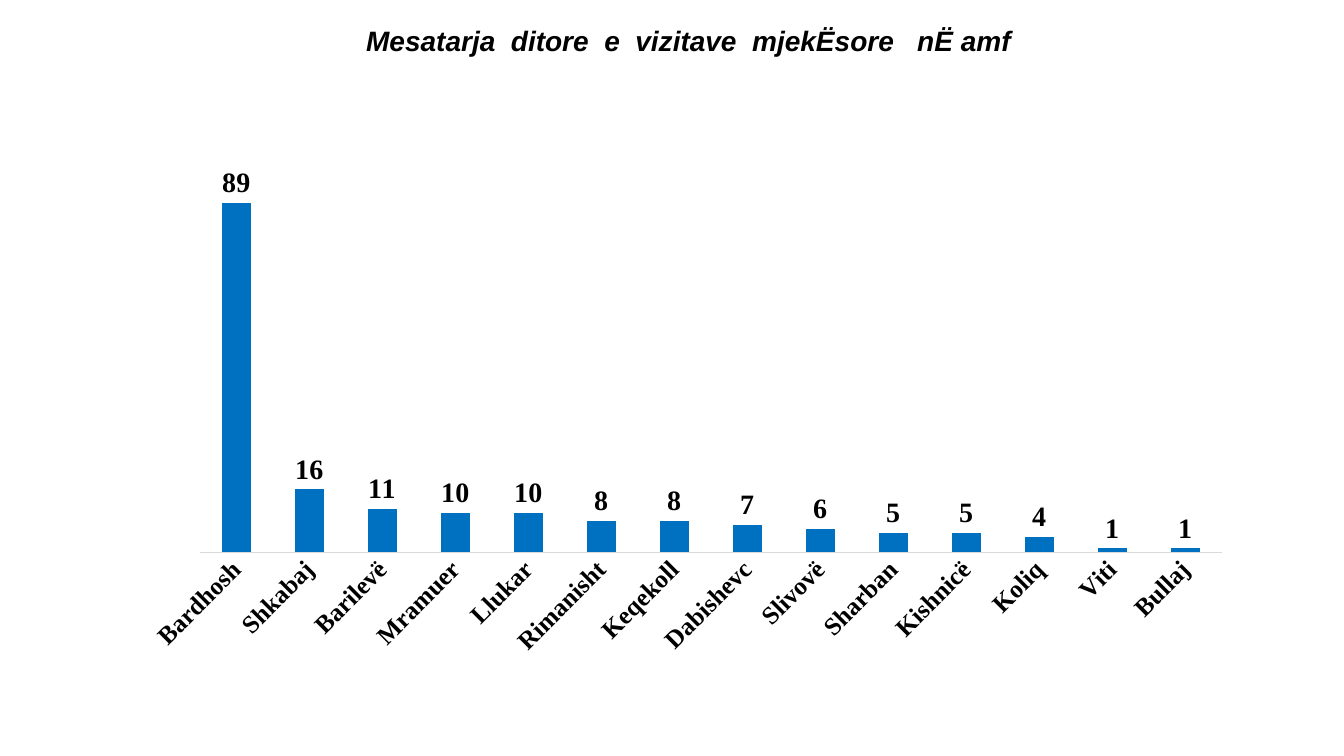
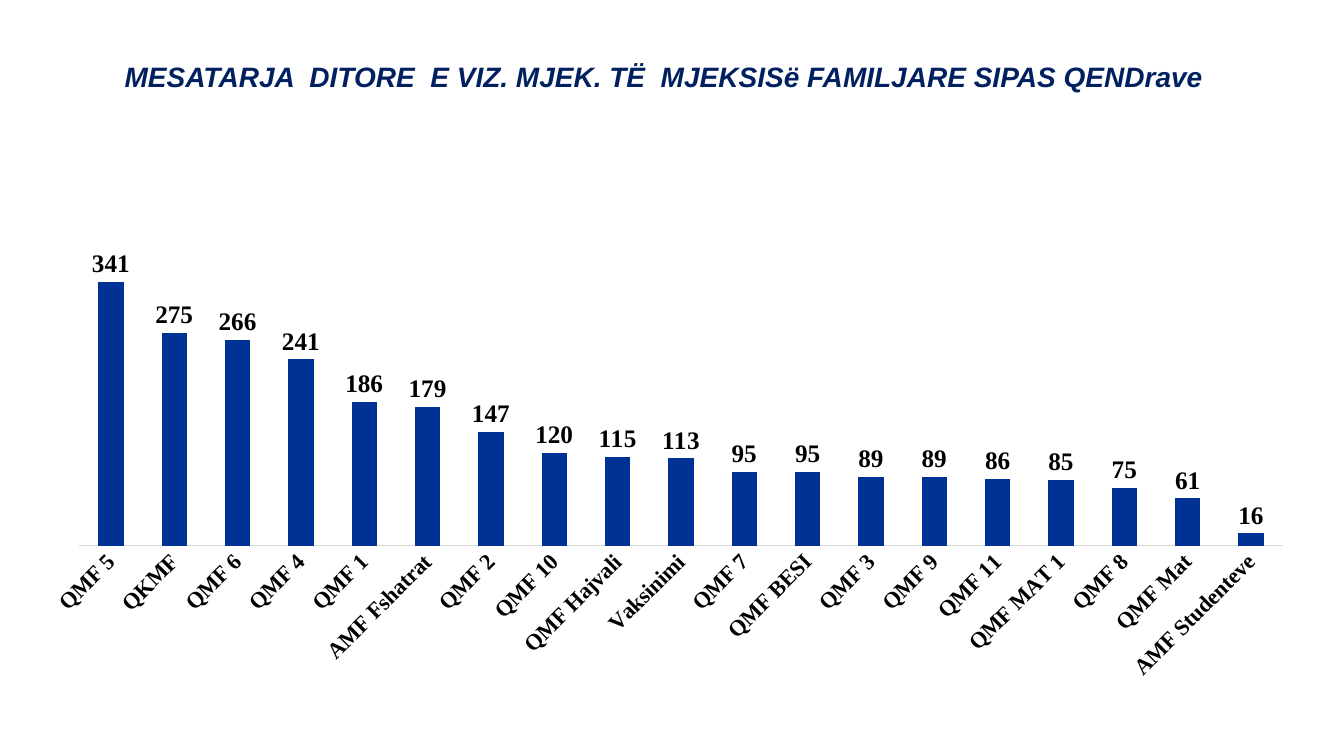
from dataclasses import dataclass

from pptx import Presentation
from pptx import util as u
from pptx.chart import data
from pptx.dml import color
from pptx.enum import chart as ec
from pptx.enum import text
from pptx.oxml import ns

COLORS = {
    "black": "000000",
    "navy": "002060",
    "sky": "0070C0",
    "royal": "003296",
    "axis": "D9D9D9",
}
HEADING_FONT = "Arial"
CHART_FONT = "Calibri"
LABEL_FONT = "Times New Roman"
TITLE_ONLY = 5
LABEL_ROTATION = "-2700000"


@dataclass(frozen=True)
class Box:
    left: float
    top: float
    width: float
    height: float

    def lengths(self) -> tuple[int, int, int, int]:
        return u.Cm(self.left), u.Cm(self.top), u.Cm(self.width), u.Cm(self.height)


@dataclass(frozen=True)
class VisitSlide:
    heading: str
    heading_box: Box
    heading_color: str
    line_spacing: float
    chart_box: Box
    bar_color: str
    category_size: int
    value_size: int
    visits: dict[str, int]


VISIT_SLIDES = (
    VisitSlide(
        heading="Mesatarja  ditore  e  vizitave  mjekËsore   nË amf",
        heading_box=Box(2.08, 0.38, 30.56, 1.37),
        heading_color="black",
        line_spacing=0.9,
        chart_box=Box(3.28, 3.76, 28.07, 13),
        bar_color="sky",
        category_size=18,
        value_size=20,
        visits={
            "Bardhosh": 89, "Shkabaj": 16, "Barilevë": 11, "Mramuer": 10,
            "Llukar": 10, "Rimanisht": 8, "Keqekoll": 8, "Dabishevc": 7,
            "Slivovë": 6, "Sharban": 5, "Kishnicë": 5, "Koliq": 4,
            "Viti": 1, "Bullaj": 1,
        },
    ),
    VisitSlide(
        heading="MESATARJA  DITORE  E VIZ. MJEK. TË  MJEKSISë FAMILJARE SIPAS QENDrave",
        heading_box=Box(2.57, 1.37, 28.32, 1.12),
        heading_color="navy",
        line_spacing=1.0,
        chart_box=Box(0.71, 5.72, 32.26, 11.66),
        bar_color="royal",
        category_size=16,
        value_size=18,
        visits={
            "QMF 5": 341, "QKMF": 275, "QMF 6": 266, "QMF 4": 241,
            "QMF 1": 186, "AMF Fshatrat": 179, "QMF 2": 147, "QMF 10": 120,
            "QMF Hajvali": 115, "Vaksinimi": 113, "QMF 7": 95, "QMF BESI": 95,
            "QMF 3": 89, "QMF 9": 89, "QMF 11": 86, "QMF MAT 1": 85,
            "QMF 8": 75, "QMF Mat": 61, "AMF Studenteve": 16,
        },
    ),
)


def rgb(name: str) -> color.RGBColor:
    return color.RGBColor.from_string(COLORS[name])


def style_font(font, family: str, size: int, color_name: str, bold: bool = True) -> None:
    font.name = family
    font.size = u.Pt(size)
    font.bold = bold
    font.color.rgb = rgb(color_name)


def add_heading(slide, visit_slide: VisitSlide) -> None:
    heading = slide.shapes.title
    heading.left, heading.top, heading.width, heading.height = visit_slide.heading_box.lengths()
    frame = heading.text_frame
    frame.word_wrap = True
    frame.auto_size = text.MSO_AUTO_SIZE.NONE
    frame.vertical_anchor = text.MSO_ANCHOR.MIDDLE
    paragraph = frame.paragraphs[0]
    paragraph.alignment = text.PP_ALIGN.CENTER
    paragraph.line_spacing = visit_slide.line_spacing
    run = paragraph.add_run()
    run.text = visit_slide.heading
    style_font(run.font, HEADING_FONT, 20, visit_slide.heading_color)
    run.font.italic = True


def style_axes(chart, category_size: int) -> None:
    centres = chart.category_axis
    centres.major_tick_mark = ec.XL_TICK_MARK.NONE
    centres.minor_tick_mark = ec.XL_TICK_MARK.NONE
    centres.has_major_gridlines = False
    centres.format.line.color.rgb = rgb("axis")
    centres.format.line.width = u.Pt(0.75)
    style_font(centres.tick_labels.font, LABEL_FONT, category_size, "black")
    body = centres._element.find(ns.qn("c:txPr")).find(ns.qn("a:bodyPr"))
    body.set("rot", LABEL_ROTATION)
    body.set("vert", "horz")
    averages = chart.value_axis
    averages.has_major_gridlines = False
    averages.visible = False


def add_visit_chart(slide, visit_slide: VisitSlide) -> None:
    visits = data.CategoryChartData(number_format="0")
    visits.categories = list(visit_slide.visits)
    visits.add_series("Series 1", list(visit_slide.visits.values()))
    chart = slide.shapes.add_chart(
        ec.XL_CHART_TYPE.COLUMN_CLUSTERED, *visit_slide.chart_box.lengths(), visits
    ).chart
    chart.has_title = False
    chart.has_legend = False
    style_font(chart.font, CHART_FONT, 10, "black", bold=False)
    style_axes(chart, visit_slide.category_size)

    plot = chart.plots[0]
    plot.vary_by_categories = False
    plot.gap_width = 150
    plot.overlap = -25
    bars = plot.series[0]
    bars.format.fill.solid()
    bars.format.fill.fore_color.rgb = rgb(visit_slide.bar_color)
    labels = bars.data_labels
    labels.show_value = True
    labels.position = ec.XL_LABEL_POSITION.OUTSIDE_END
    labels.number_format = "0"
    labels.number_format_is_linked = False
    style_font(labels.font, LABEL_FONT, visit_slide.value_size, "black")


def main() -> None:
    deck = Presentation()
    deck.slide_width = u.Cm(33.87)
    deck.slide_height = u.Cm(19.05)
    for visit_slide in VISIT_SLIDES:
        slide = deck.slides.add_slide(deck.slide_layouts[TITLE_ONLY])
        add_heading(slide, visit_slide)
        add_visit_chart(slide, visit_slide)
    deck.save("out.pptx")


if __name__ == "__main__":
    main()
